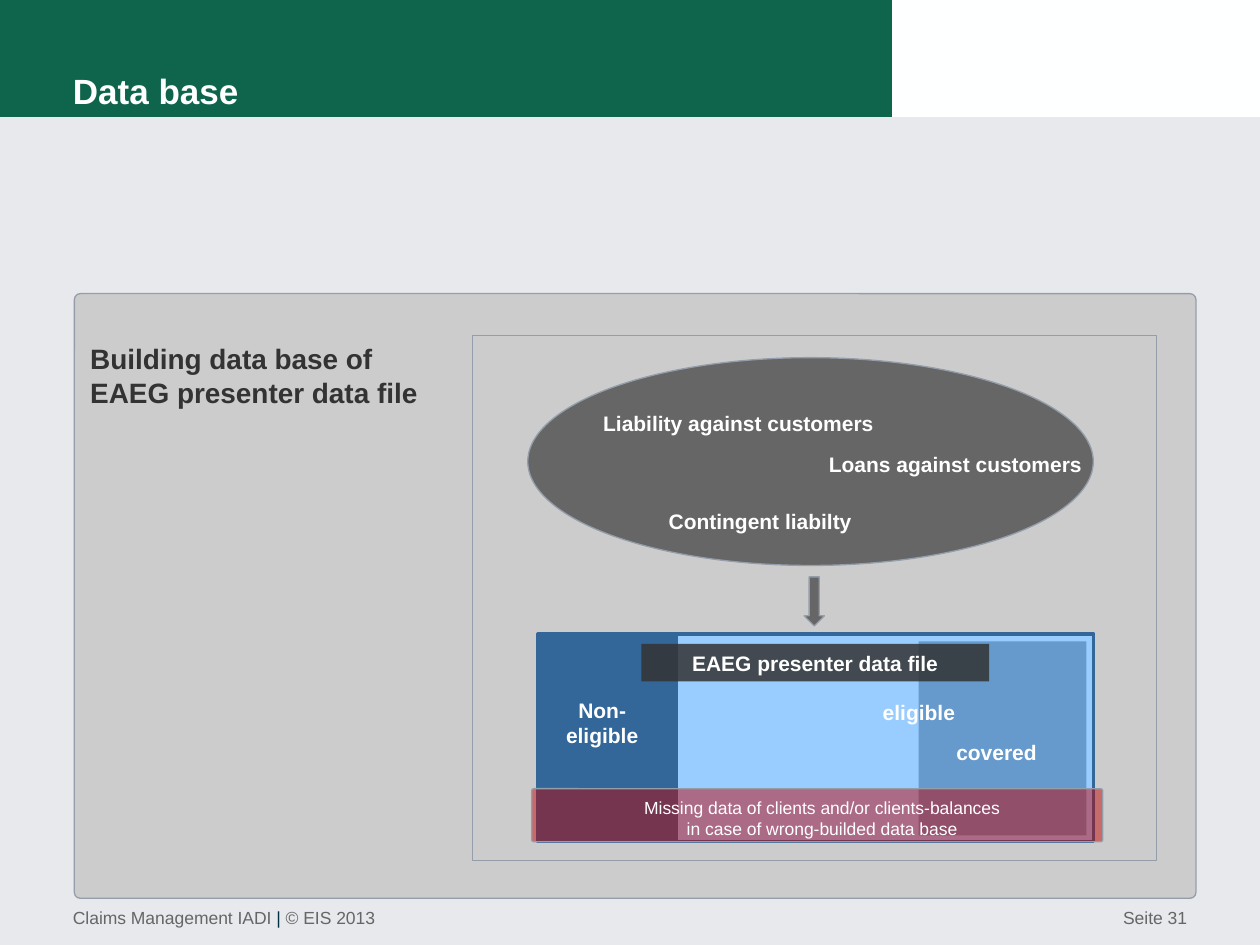
from lxml import etree
from pptx import Presentation
from pptx.dml.color import RGBColor
from pptx.enum.shapes import MSO_SHAPE
from pptx.enum.text import MSO_ANCHOR, PP_ALIGN
from pptx.oxml.ns import qn
from pptx.util import Cm, Pt

RECT, ROUND = MSO_SHAPE.RECTANGLE, MSO_SHAPE.ROUNDED_RECTANGLE
OVAL, DOWN = MSO_SHAPE.OVAL, MSO_SHAPE.DOWN_ARROW
LEFT, CENTER, RIGHT = PP_ALIGN.LEFT, PP_ALIGN.CENTER, PP_ALIGN.RIGHT

COLORS = {
    "background": "E7E9EC", "white": "FEFFFF", "green": "0E654B",
    "panel": "CCCCCC", "outline": "949EAA", "grey": "666666",
    "dark": "333333", "navy": "336699", "sky": "99CCFF", "blue": "6699CC",
    "red": "C00000", "text": "FFFFFF", "divider": "003142",
}

# preset, (left, top, width, height) in cm, fill, (line, points), opacity %, corner
THIN, THICK = ("outline", 0.75), ("navy", 2)
SHAPES = [
    (RECT, (0, 0, 25.4, 2.36), "white", None, 100, None),
    (RECT, (0, 0, 17.98, 2.36), "green", None, 100, None),
    (ROUND, (1.5, 5.92, 22.61, 12.19), "panel", THIN, 100, 0.01),
    (RECT, (9.53, 6.76, 13.79, 10.59), "panel", THIN, 100, None),
    (OVAL, (10.64, 7.21, 11.4, 4.19), "grey", THIN, 100, None),
    (RECT, (10.85, 12.78, 2.79, 4.19), "navy", THICK, 100, None),
    (RECT, (13.64, 12.78, 8.41, 4.19), "sky", THICK, 100, None),
    (RECT, (18.52, 12.93, 3.38, 3.91), "blue", None, 100, None),
    (DOWN, (16.21, 11.63, 0.41, 0.99), "grey", THIN, 100, None),
    (RECT, (12.93, 12.98, 7.01, 0.76), "dark", None, 85, None),
    (ROUND, (10.72, 15.9, 11.51, 1.07), "red", THIN, 48, 0.04),
]

# lines, (left, top, width, height) in cm, size, bold, colour, alignment
LABELS = [
    (["Liability against customers"], (11.91, 8.15, 6.83, 0.76), 12, True, "text", LEFT),
    (["Contingent liabilty"], (13.23, 10.13, 6.4, 0.76), 12, True, "text", LEFT),
    (["Loans against customers"], (16.46, 8.97, 5.79, 0.76), 12, True, "text", LEFT),
    (["Non-eligible"], (10.72, 13.94, 2.84, 1.27), 12, True, "text", CENTER),
    (["eligible"], (16.1, 13.97, 4.85, 0.76), 12, True, "text", CENTER),
    (["covered"], (18.77, 14.78, 2.64, 0.76), 12, True, "text", CENTER),
    (["EAEG presenter data file"], (12.93, 12.98, 7.01, 0.76), 12, True, "text", CENTER),
    (["Missing data of clients and/or clients-balances",
      "in case of wrong-builded data base"],
     (12.37, 15.95, 8.4, 1.12), 10, False, "text", CENTER),
    (["Building data base of", "EAEG presenter data file"],
     (1.57, 6.76, 7.8, 1.63), 16, True, "dark", LEFT),
]

# runs of (text, colour), box in cm, alignment
FOOTERS = [
    ([("Claims Management IADI ", "grey"), ("| ", "divider"), ("© EIS 2013", "grey")],
     (1.47, 18.29, 15.24, 0.76), LEFT),
    ([("Seite 31", "grey")], (15.04, 18.29, 8.89, 0.76), RIGHT),
]


def rgb(name):
    return RGBColor.from_string(COLORS[name])


def cm(box):
    return [Cm(v) for v in box]


def set_font(p, size, bold=False, color=None):
    p.font.name, p.font.size, p.font.bold = "Arial", Pt(size), bold
    if color:
        p.font.color.rgb = rgb(color)


def no_margins(tf):
    tf.margin_left = tf.margin_right = tf.margin_top = tf.margin_bottom = 0


def add_shape(s, preset, box, fill, line, opacity, corner):
    sp = s.shapes.add_shape(preset, *cm(box))
    sp.shadow.inherit = False
    sp.fill.solid()
    sp.fill.fore_color.rgb = rgb(fill)
    if opacity < 100:
        color = sp.fill._xPr.find(qn("a:solidFill"))[0]
        etree.SubElement(color, qn("a:alpha")).set("val", str(opacity * 1000))
    if line:
        sp.line.color.rgb, sp.line.width = rgb(line[0]), Pt(line[1])
    else:
        sp.line.fill.background()
    if corner:
        sp.adjustments[0] = corner


def add_text_frame(s, box):
    tf = s.shapes.add_textbox(*cm(box)).text_frame
    tf.word_wrap = True
    return tf


def add_label(s, lines, box, size, bold, color, align):
    tf = add_text_frame(s, box)
    tf.text = "\n".join(lines)
    for p in tf.paragraphs:
        p.alignment = align
        set_font(p, size, bold, color)


def add_footer(s, runs, box, align):
    tf = add_text_frame(s, box)
    no_margins(tf)
    p = tf.paragraphs[0]
    p.alignment = align
    set_font(p, 10)
    for text, color in runs:
        r = p.add_run()
        r.text = text
        r.font.color.rgb = rgb(color)


def add_title(s, text, box):
    """Fill the title placeholder and bring it in front of the banner."""
    title = s.shapes.title
    title.left, title.top, title.width, title.height = cm(box)
    tf = title.text_frame
    tf.text = text
    tf.vertical_anchor = MSO_ANCHOR.BOTTOM
    no_margins(tf)
    p = tf.paragraphs[0]
    p.alignment, p.line_spacing = LEFT, Pt(24)
    set_font(p, 20, True, "text")
    s.shapes._spTree.append(title._element)


def main():
    prs = Presentation()
    prs.slide_width, prs.slide_height = Cm(25.4), Cm(19.05)
    s = prs.slides.add_slide(prs.slide_layouts[5])
    s.background.fill.solid()
    s.background.fill.fore_color.rgb = rgb("background")
    for shape in SHAPES:
        add_shape(s, *shape)
    for label in LABELS:
        add_label(s, *label)
    for footer in FOOTERS:
        add_footer(s, *footer)
    add_title(s, "Data base", (1.47, 0, 16.48, 2.24))
    prs.save("out.pptx")


if __name__ == "__main__":
    main()
